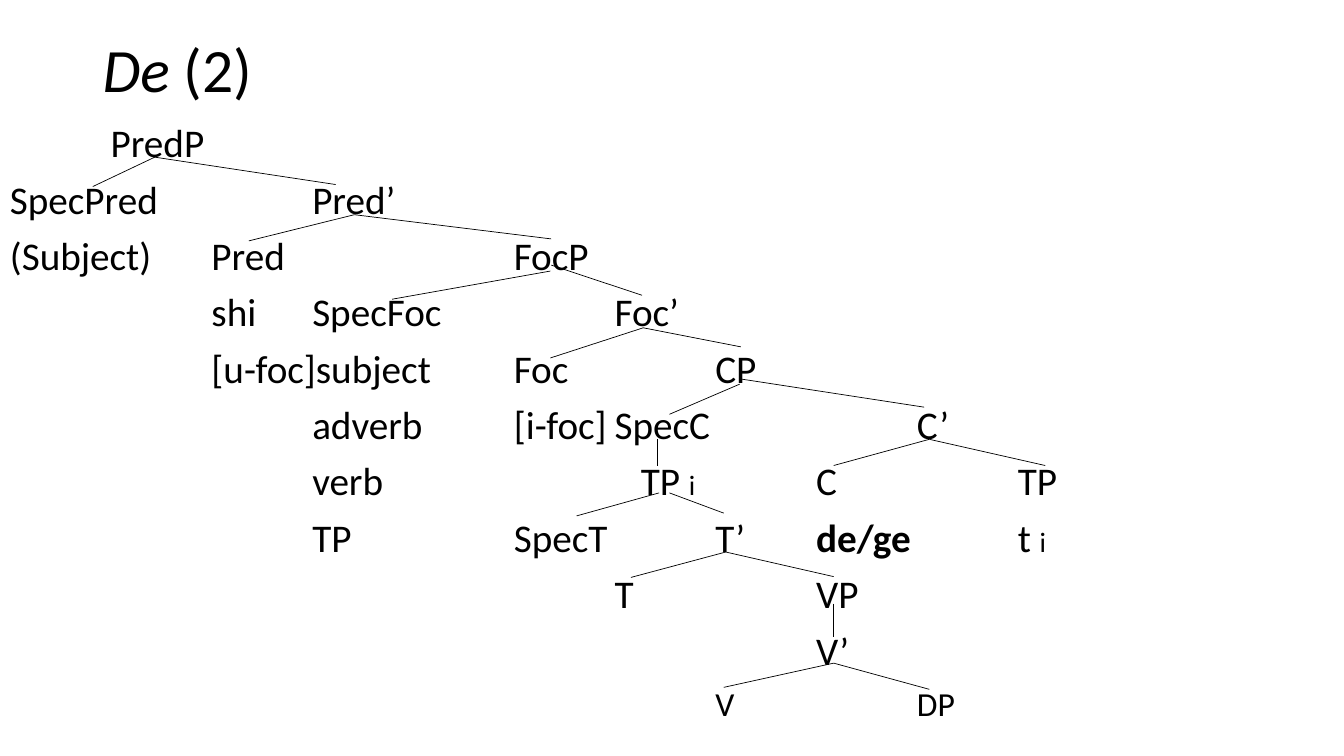
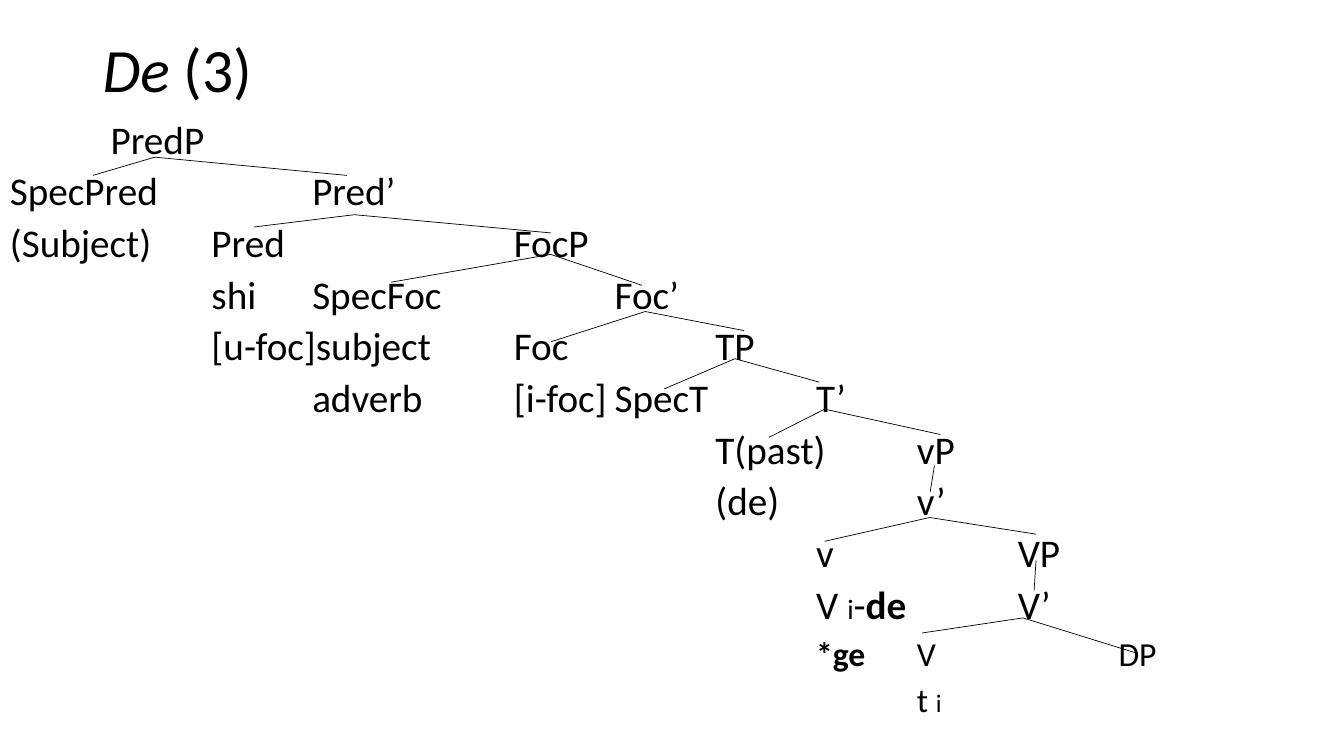
from dataclasses import dataclass

from lxml import etree
from pptx import Presentation
from pptx.dml.color import RGBColor
from pptx.enum.shapes import MSO_CONNECTOR
from pptx.enum.text import MSO_ANCHOR, MSO_AUTO_SIZE, PP_ALIGN
from pptx.oxml.ns import qn
from pptx.util import Cm, Pt

STRAIGHT = MSO_CONNECTOR.STRAIGHT
MIDDLE = MSO_ANCHOR.MIDDLE
TOP = MSO_ANCHOR.TOP
LEFT = PP_ALIGN.LEFT
NO_AUTOFIT = MSO_AUTO_SIZE.NONE
TITLE_ONLY = 5


@dataclass(frozen=True)
class Theme:
    font: str = "Calibri"
    ink: RGBColor = RGBColor(0x00, 0x00, 0x00)
    title: int = 44
    node: int = 28
    leaf: int = 24
    index: int = 20
    leaf_index: int = 18
    space_before: int = 10
    title_spacing: float = 0.9
    branch_width: float = 0.5
    column: float = 2.54


THEME = Theme()


@dataclass(frozen=True)
class Span:
    """A stretch of text that departs from the style of its row."""
    text: str
    size: int = 0
    bold: bool = False


@dataclass(frozen=True)
class Row:
    """One level of the tree: cells are (column, text or Span, ...)."""
    cells: tuple
    size: int = THEME.node


def row(*cells, size=THEME.node):
    return Row(cells, size)


class Deck:
    def __init__(self, theme):
        self.theme = theme
        self.prs = Presentation()
        self.prs.slide_width, self.prs.slide_height = Cm(33.87), Cm(19.05)
        self.slide = None

    def add_run(self, paragraph, text, size, bold=False, italic=False):
        run = paragraph.add_run()
        run.text = text
        font = run.font
        font.name, font.size = self.theme.font, Pt(size)
        font.bold, font.italic = bold, italic
        font.color.rgb = self.theme.ink

    def start_slide(self, particle, number):
        """Add a slide whose title is an italic particle and a number."""
        layout = self.prs.slide_layouts[TITLE_ONLY]
        self.slide = self.prs.slides.add_slide(layout)
        title = self.slide.shapes.title
        title.left, title.top = Cm(2.33), Cm(0)
        title.width, title.height = Cm(29.21), Cm(3.68)
        frame = title.text_frame
        frame.auto_size, frame.vertical_anchor = NO_AUTOFIT, MIDDLE
        heading = frame.paragraphs[0]
        heading.alignment = LEFT
        heading.line_spacing = self.theme.title_spacing
        self.add_run(heading, particle + " ", self.theme.title, italic=True)
        self.add_run(heading, number, self.theme.title)

    def set_tabs(self, paragraph, columns):
        tabs = etree.SubElement(paragraph._p.get_or_add_pPr(), qn("a:tabLst"))
        for column in columns:
            stop = Cm(column * self.theme.column)
            etree.SubElement(tabs, qn("a:tab"), pos=str(int(stop)), algn="l")

    def add_labels(self, rows, line_spacing):
        """Write the node labels, one paragraph a level, on tab columns."""
        box = self.slide.shapes.add_textbox(Cm(0), Cm(3), Cm(33.87), Cm(16.05))
        frame = box.text_frame
        frame.word_wrap, frame.auto_size = True, NO_AUTOFIT
        frame.vertical_anchor = TOP
        for position, level in enumerate(rows):
            paragraph = frame.add_paragraph() if position else frame.paragraphs[0]
            paragraph.alignment = LEFT
            paragraph.line_spacing = line_spacing
            paragraph.space_before = Pt(self.theme.space_before)
            self.set_tabs(paragraph, [cell[0] for cell in level.cells if cell[0]])
            for column, *spans in level.cells:
                if column:
                    self.add_run(paragraph, "\t", level.size)
                for span in spans:
                    if isinstance(span, str):
                        span = Span(span)
                    self.add_run(paragraph, span.text, span.size or level.size, span.bold)

    def add_branches(self, branches):
        """Draw lines from each apex (first point) to its daughters."""
        for apex, *daughters in branches:
            for daughter in daughters:
                ends = [Cm(length) for length in (*apex, *daughter)]
                branch = self.slide.shapes.add_connector(STRAIGHT, *ends)
                branch.line.color.rgb = self.theme.ink
                branch.line.width = Pt(self.theme.branch_width)
                etree.SubElement(branch._element.spPr, qn("a:effectLst"))

    def save(self):
        self.prs.save("out.pptx")


# Levels common to both trees
INDEX = Span("i", THEME.index)
UPPER_ROWS = [
    row((1, "PredP")),
    row((0, "SpecPred"), (3, "Pred’")),
    row((0, "(Subject)"), (2, "Pred"), (5, "FocP")),
    row((2, "shi"), (3, "SpecFoc"), (6, "Foc’")),
]

# Tree with de/ge in C
C_ROWS = UPPER_ROWS + [
    row((2, "[u-foc]subject"), (5, "Foc"), (7, "CP")),
    row((3, "adverb"), (5, "[i-foc]"), (6, "SpecC"), (9, "C’")),
    row((3, "verb"), (6.26, "TP ", INDEX), (8, "C"), (10, "TP")),
    row((3, "TP"), (5, "SpecT"), (7, "T’"), (8, Span("de/ge", bold=True)),
        (10, "t ", INDEX)),
    row((6, "T"), (8, "VP")),
    row((8, "V’")),
    row((7, "V"), (9, "DP"), size=THEME.leaf),
]
C_BRANCHES = [
    ((3.9, 3.96), (2.34, 4.7), (8.46, 4.65)),
    ((8.93, 5.41), (6.27, 6.07), (13.89, 6.02)),
    ((13.87, 6.83), (9.88, 7.54)),
    ((13.89, 6.68), (16.18, 7.44)),
    ((16.21, 8.26), (13.87, 9.02), (18.67, 8.74)),
    ((18.64, 9.68), (16.87, 10.44)),
    ((18.67, 9.55), (23.29, 10.26)),
    ((23.42, 11.07), (21.01, 11.73), (26.34, 11.73)),
    ((16.56, 11.07), (16.56, 11.73)),
    ((16.61, 12.42), (14.53, 13)),
    ((16.87, 12.42), (18.24, 12.93)),
    ((18.29, 13.91), (15.9, 14.55), (21.01, 14.53)),
    ((21.01, 15.21), (21.01, 16.05)),
    ((21.01, 16.71), (18.24, 17.32), (23.42, 17.37)),
]

# Tree with de in T
T_ROWS = UPPER_ROWS + [
    row((2, "[u-foc]subject"), (5, "Foc"), (7, "TP")),
    row((3, "adverb"), (5, "[i-foc]"), (6, "SpecT"), (8, "T’")),
    row((7, "T(past)"), (9, "vP")),
    row((7, "(de)"), (9, "v’")),
    row((8, "v"), (10, "VP")),
    row((8, "V ", INDEX, "-", Span("de", bold=True)), (10, "V’")),
    row((8, Span("*ge", bold=True)), (9, "V"), (11, "DP"), size=THEME.leaf),
    row((9, "t ", Span("i", THEME.leaf_index)), size=THEME.leaf),
]
T_BRANCHES = [
    ((3.9, 3.96), (2.34, 4.42), (8.74, 4.42)),
    ((8.93, 5.41), (6.4, 5.72), (13.89, 5.87)),
    ((13.88, 6.41), (9.86, 7.11), (16.18, 7.19)),
    ((16.26, 7.85), (13.89, 8.61), (18.75, 8.33)),
    ((18.52, 9.04), (16.74, 9.8), (20.65, 9.63)),
    ((20.78, 10.31), (19.38, 11.02), (23.7, 10.95)),
    ((23.55, 11.73), (23.44, 12.4)),
    ((23.43, 13.04), (20.78, 13.64), (26.11, 13.46)),
    ((26.11, 14.12), (26.06, 14.88)),
    ((25.78, 15.57), (23.24, 15.95), (28.65, 16.46)),
]

# Title number, labels, line spacing and branches of each slide
TREES = [
    ("(2)", C_ROWS, 0.9, C_BRANCHES),
    ("(3)", T_ROWS, 0.8, T_BRANCHES),
]


def main():
    deck = Deck(THEME)
    for number, rows, line_spacing, branches in TREES:
        deck.start_slide("De", number)
        deck.add_labels(rows, line_spacing)
        deck.add_branches(branches)
    deck.save()


if __name__ == "__main__":
    main()
